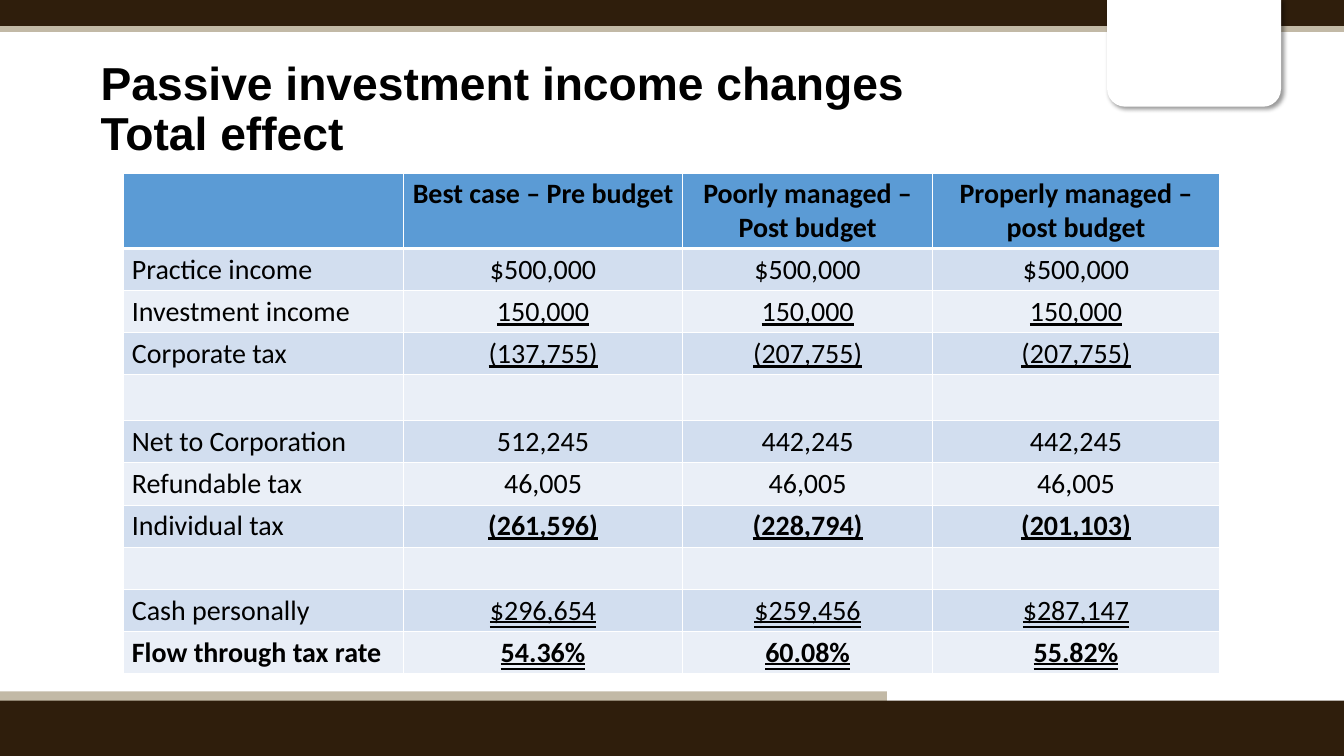
from lxml import etree
from pptx import Presentation
from pptx.dml.color import RGBColor
from pptx.enum.shapes import MSO_SHAPE
from pptx.enum.text import MSO_ANCHOR, MSO_UNDERLINE, PP_ALIGN
from pptx.oxml import parse_xml
from pptx.oxml.ns import nsdecls, qn
from pptx.util import Inches, Pt

RECT, TAB = MSO_SHAPE.RECTANGLE, MSO_SHAPE.ROUND_2_SAME_RECTANGLE
SINGLE, DOUBLE = MSO_UNDERLINE.SINGLE_LINE, MSO_UNDERLINE.DOUBLE_LINE
LEFT, CENTER, MIDDLE = PP_ALIGN.LEFT, PP_ALIGN.CENTER, MSO_ANCHOR.MIDDLE

WIDTH, HEIGHT = 16, 9
WHITE, BLACK, BROWN, SAND = "FFFFFF", "000000", "2F1E0C", "C2B9A6"
HEADER_BLUE, BANDS = "5B9BD5", ("EAEFF7", "D2DEEF")

COLUMN_WIDTHS = (3.33, 3.33, 2.97, 3.42)
HEADER_HEIGHT, ROW_HEIGHT = 0.89, 0.5
GAP_HEIGHTS = {4: 0.55, 8: 0.51}
HEADINGS = ("", "Best case – Pre budget", "Poorly managed – Post budget",
            "Properly managed – post budget")
TAX_ROWS = (
    ("Practice income", "$500,000", "$500,000", "$500,000"),
    ("Investment income", "150,000", "150,000", "150,000"),
    ("Corporate tax", "(137,755)", "(207,755)", "(207,755)"),
    ("", "", "", ""),
    ("Net to Corporation", "512,245", "442,245", "442,245"),
    ("Refundable tax", "46,005", "46,005", "46,005"),
    ("Individual tax", "(261,596)", "(228,794)", "(201,103)"),
    ("", "", "", ""),
    ("Cash personally", "$296,654", "$259,456", "$287,147"),
    ("Flow through tax rate", "54.36%", "60.08%", "55.82%"),
)
UNDERLINES = {2: SINGLE, 3: SINGLE, 7: SINGLE, 9: DOUBLE, 10: DOUBLE}
BOLD_LABELS, BOLD_VALUES = {0, 10}, {0, 7, 10}


def color(hex_value):
    return RGBColor.from_string(hex_value)


def inches(box):
    return [Inches(length) for length in box]


def write(paragraph, text, align=LEFT, **font_format):
    paragraph.text = text
    paragraph.alignment = align
    for run in paragraph.runs:
        run.font.color.rgb = color(BLACK)
        for attribute, value in font_format.items():
            setattr(run.font, attribute, value)


def add_block(slide, box, fill, kind=RECT):
    block = slide.shapes.add_shape(kind, *inches(box))
    block.shadow.inherit = False
    block.fill.solid()
    block.fill.fore_color.rgb = color(fill)
    block.line.fill.background()
    return block


def add_frame(slide, box):
    """Draw the top and bottom bands and the white tab hanging at top right."""
    left, top, width, height = box
    bottom = top + height
    add_block(slide, (left, top + 0.3, width, 0.08), SAND)
    add_block(slide, (left, top, width, 0.31), BROWN)
    add_block(slide, (left, bottom - 0.77, width * 0.66, 0.17), SAND)
    add_block(slide, (left, bottom - 0.66, width, 0.66), BROWN)
    tab = add_block(slide, (left + 13.18, top - 0.01, 2.07, 1.28), WHITE, TAB)
    tab.rotation = 180
    effects = tab.fill._xPr.find(qn("a:effectLst"))
    effects.append(parse_xml(
        f'<a:outerShdw {nsdecls("a")} blurRad="{Pt(4)}" dist="{Pt(3)}" '
        f'dir="2700000" algn="tl" rotWithShape="0"><a:srgbClr val="{BLACK}">'
        '<a:alpha val="40000"/></a:srgbClr></a:outerShdw>'))


def add_title(slide, box, text):
    frame = slide.shapes.add_textbox(*inches(box)).text_frame
    frame.word_wrap = True
    frame.vertical_anchor = MIDDLE
    title = frame.paragraphs[0]
    title.line_spacing = 0.9
    write(title, text, name="Arial", size=Pt(39.6), bold=True)


def add_borders(cell, widths):
    properties = cell._tc.get_or_add_tcPr()
    for side, width in widths.items():
        line = etree.SubElement(properties, qn(f"a:ln{side}"), w=str(Pt(width)))
        fill = etree.SubElement(line, qn("a:solidFill"))
        etree.SubElement(fill, qn("a:srgbClr"), val=WHITE)


def add_tax_table(slide, left, top):
    rows = (HEADINGS, *TAX_ROWS)
    heights = [HEADER_HEIGHT] + [GAP_HEIGHTS.get(r, ROW_HEIGHT)
                                 for r in range(1, len(rows))]
    box = (left, top, sum(COLUMN_WIDTHS), sum(heights))
    table = slide.shapes.add_table(len(rows), len(HEADINGS), *inches(box)).table
    for column, width in zip(table.columns, COLUMN_WIDTHS):
        column.width = Inches(width)
    for r, (texts, height) in enumerate(zip(rows, heights)):
        table.rows[r].height = Inches(height)
        for c, text in enumerate(texts):
            cell = table.cell(r, c)
            add_borders(cell, {"L": 1, "R": 1, "T": 3 if r == 1 else 1,
                               "B": 3 if r == 0 else 1})
            cell.fill.solid()
            cell.fill.fore_color.rgb = color(BANDS[r % 2] if r else HEADER_BLUE)
            if text:
                write(cell.text_frame.paragraphs[0], text,
                      CENTER if c else LEFT, name="Calibri", size=Pt(24),
                      bold=r in (BOLD_VALUES if c else BOLD_LABELS),
                      underline=UNDERLINES.get(r, False) if c else False)


def main():
    deck = Presentation()
    deck.slide_width, deck.slide_height = inches((WIDTH, HEIGHT))
    slide = deck.slides.add_slide(deck.slide_layouts[6])
    add_frame(slide, (0, 0, WIDTH, HEIGHT))
    add_title(slide, (1.1, 0.72, 11.42, 1.2),
              "Passive investment income changes\nTotal effect")
    add_tax_table(slide, 1.47, 2.06)
    deck.save("out.pptx")


if __name__ == "__main__":
    main()
